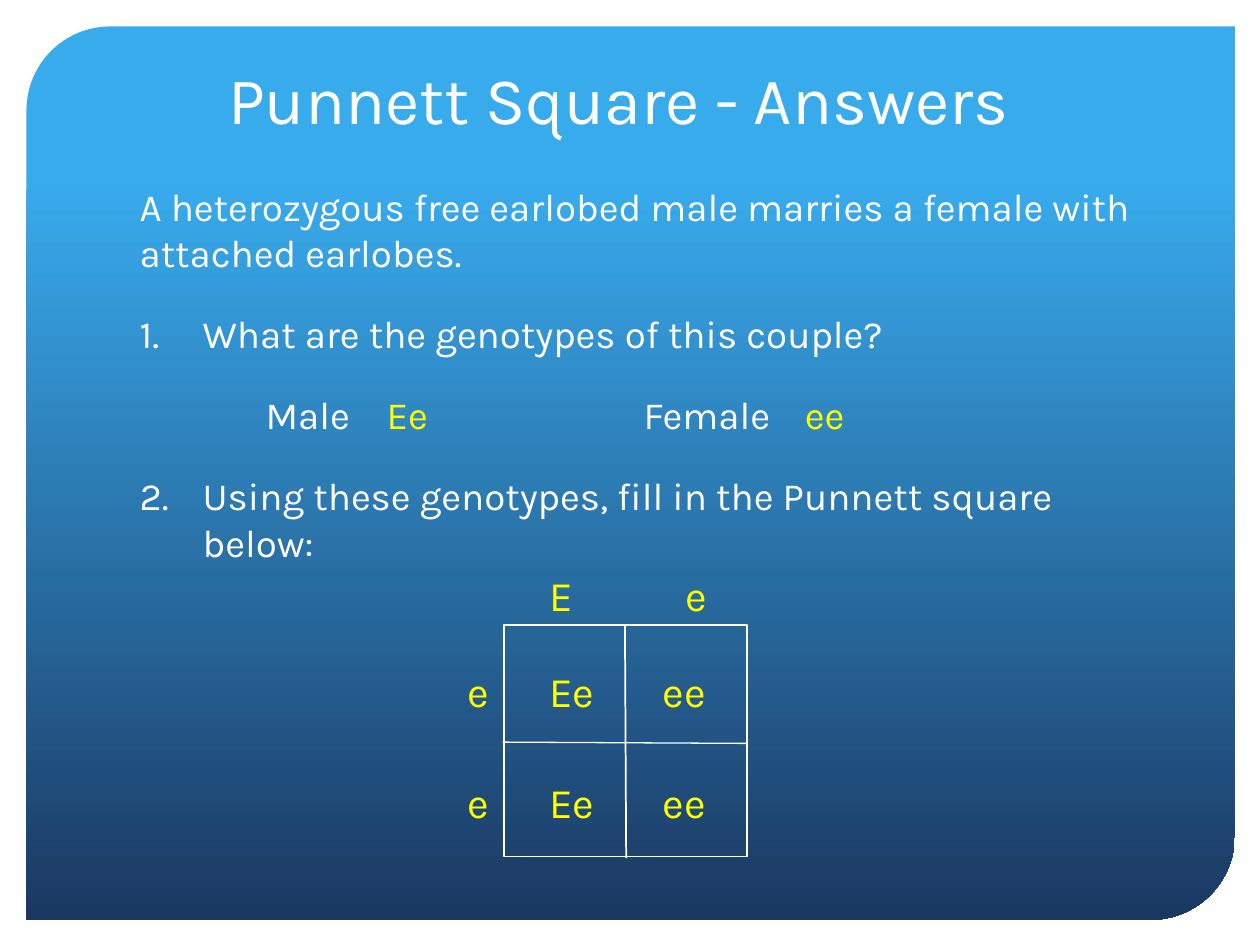
from lxml.etree import SubElement
from pptx import Presentation
from pptx.dml.color import RGBColor
from pptx.enum.shapes import MSO_CONNECTOR as Conn, MSO_SHAPE as Geo
from pptx.enum.text import MSO_ANCHOR as Anchor, MSO_AUTO_SIZE as Fit, PP_ALIGN as Align
from pptx.oxml.ns import qn
from pptx.util import Inches, Pt

WHITE, GOLD = "FFFFFF", "FFFF00"
SKY, NAVY = "38ABED", "1B3861"
TABS = (1, 1.96, 4, 5.28)


def rgb(code):
    return RGBColor.from_string(code)


def box(*sizes):
    return [Inches(size) for size in sizes]


def style(para, size, color):
    font = para.font
    font.name, font.size = "Karla", Pt(size)
    font.color.rgb = rgb(color)


def panel(slide):
    shape = slide.shapes.add_shape(Geo.ROUND_2_DIAG_RECTANGLE, *box(0.21, 0.21, 9.59, 7.09))
    shape.shadow.inherit = False
    shape.adjustments[0] = 0.094
    shape.line.fill.background()
    fill = shape.fill
    fill.gradient()
    fill.gradient_angle = 270
    for stop, pos, color in zip(fill.gradient_stops, (0.17, 1), (SKY, NAVY)):
        stop.position = pos
        stop.color.rgb = rgb(color)
    # Behind the title
    tree = slide.shapes._spTree
    tree.remove(shape._element)
    tree.insert(2, shape._element)


def head(slide, text):
    title = slide.shapes.title
    title.left, title.top, title.width, title.height = box(1.71, 0, 8.29, 1.14)
    frame = title.text_frame
    frame.text = text
    frame.vertical_anchor = Anchor.BOTTOM
    frame.auto_size = Fit.NONE
    para = frame.paragraphs[0]
    para.alignment = Align.LEFT
    style(para, 38, WHITE)


def number(para, start):
    props = para._p.get_or_add_pPr()
    props.set("marL", str(Inches(0.5)))
    props.set("indent", str(-Inches(0.5)))
    SubElement(props, qn("a:buFont"), typeface="Karla")
    SubElement(props, qn("a:buAutoNum"), type="arabicPeriod", startAt=str(start))


def tabs(para):
    stops = SubElement(para._p.get_or_add_pPr(), qn("a:tabLst"))
    for pos in TABS:
        SubElement(stops, qn("a:tab"), pos=str(Inches(pos)), algn="l")


def body(slide, items):
    frame = slide.shapes.add_textbox(*box(1.01, 1.4, 8.29, 4.6)).text_frame
    frame.word_wrap = True
    for i, (start, runs) in enumerate(items):
        para = frame.paragraphs[0] if i == 0 else frame.add_paragraph()
        if i:
            para.space_before = Pt(20)
        if start:
            number(para, start)
        if len(runs) > 1:
            tabs(para)
        style(para, 22, WHITE)
        # Every second run is an answer
        for j, text in enumerate(runs):
            run = para.add_run()
            run.text = text
            if j % 2:
                run.font.color.rgb = rgb(GOLD)


def rule(group, ends, width):
    line = group.shapes.add_connector(Conn.STRAIGHT, *box(*ends))
    line.line.color.rgb = rgb(WHITE)
    line.line.width = Pt(width)
    SubElement(line._element.spPr, qn("a:effectLst"))


def square(slide):
    group = slide.shapes.add_group_shape()
    frame = group.shapes.add_shape(Geo.RECTANGLE, *box(4, 4.96, 1.93, 1.84))
    frame.shadow.inherit = False
    frame.fill.background()
    frame.line.color.rgb = rgb(WHITE)
    frame.line.width = Pt(0.75)
    rule(group, (4.96, 4.97, 4.97, 6.81), 1)
    rule(group, (3.99, 5.89, 5.93, 5.9), 0.75)


def allele(slide, text, left, top):
    width = 0.39 if len(text) == 1 else 0.57
    frame = slide.shapes.add_textbox(*box(left, top, width, 0.5)).text_frame
    frame.word_wrap = False
    frame.auto_size = Fit.SHAPE_TO_FIT_TEXT
    frame.text = text
    style(frame.paragraphs[0], 24, GOLD)


def main():
    prs = Presentation()
    prs.slide_width, prs.slide_height = box(10, 7.5)
    slide = prs.slides.add_slide(prs.slide_layouts[5])
    panel(slide)
    head(slide, "Punnett Square - Answers")
    body(slide, [
        (0, ["A heterozygous free earlobed male marries a female with attached earlobes."]),
        (1, ["What are the genotypes of this couple?"]),
        (0, ["\tMale\t", "Ee", "\tFemale\t", "ee"]),
        (2, ["Using these genotypes, fill in the Punnett square below:"]),
    ])
    square(slide)
    # Parents' alleles, then one row of offspring per mother's allele
    allele(slide, "E", 4.26, 4.47)
    allele(slide, "e", 5.34, 4.47)
    for top in (5.23, 6.11):
        for text, left in (("e", 3.61), ("Ee", 4.26), ("ee", 5.16)):
            allele(slide, text, left, top)
    prs.save("out.pptx")


if __name__ == "__main__":
    main()
